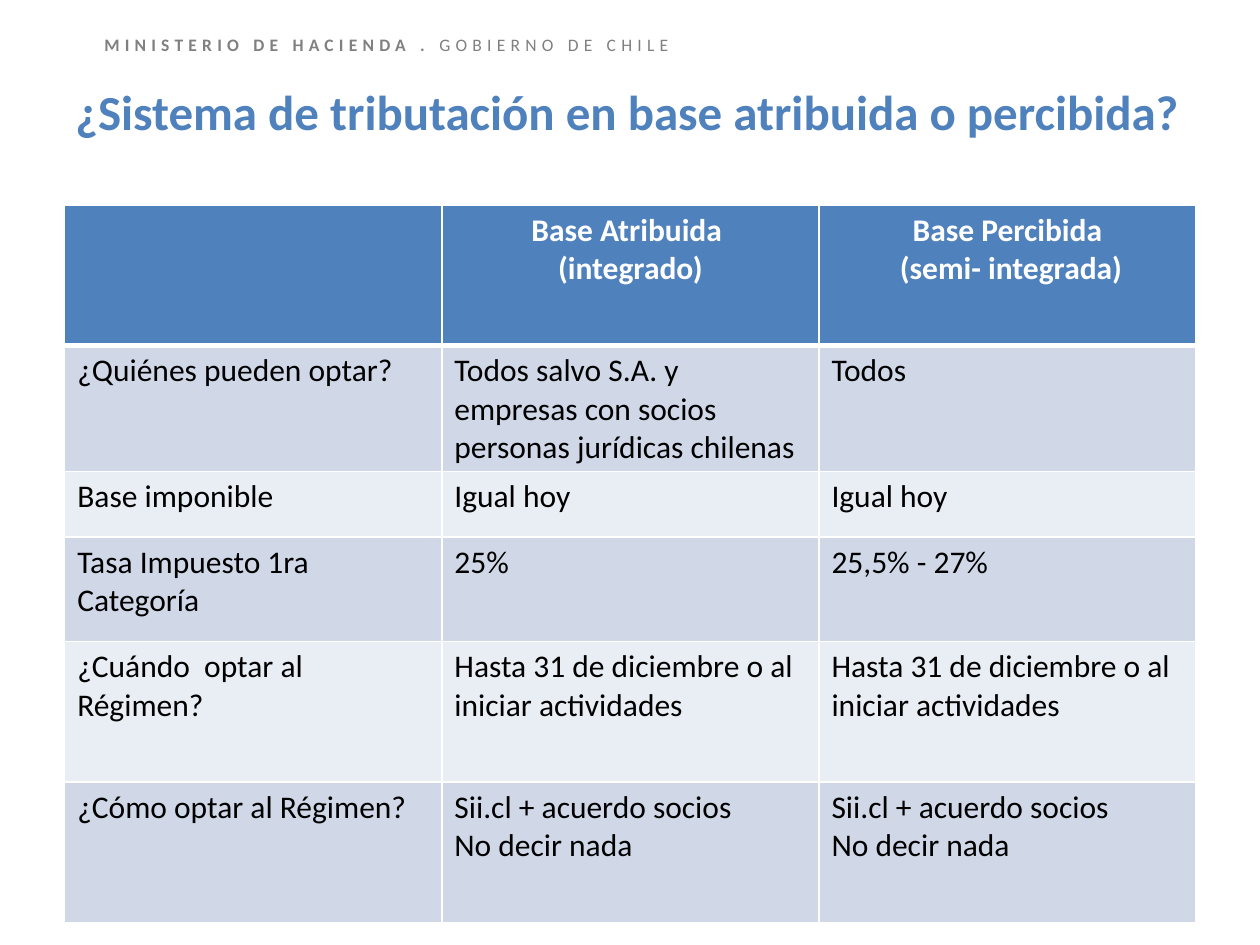
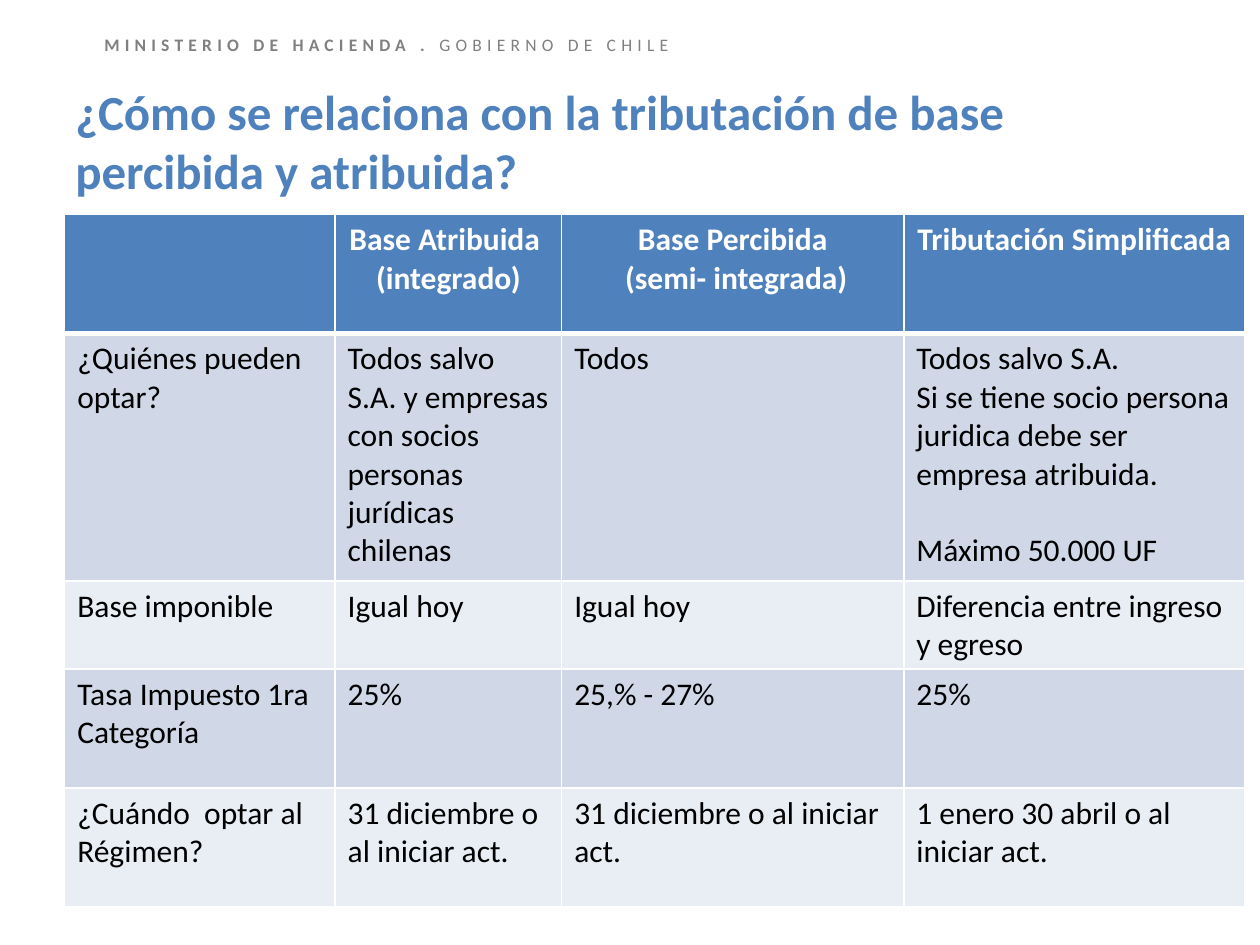
from pptx import Presentation
from pptx.dml.color import RGBColor
from pptx.enum.text import PP_ALIGN
from pptx.oxml.ns import qn
from pptx.util import Pt
from lxml.etree import SubElement

FONT = "Calibri"
BLUE = RGBColor(0x4F, 0x81, 0xBD)
DARK_BAND = RGBColor(0xD0, 0xD8, 0xE8)
LIGHT_BAND = RGBColor(0xE9, 0xED, 0xF4)
GRAY = RGBColor(0x80, 0x80, 0x80)
WHITE = RGBColor(0xFF, 0xFF, 0xFF)
BLACK = RGBColor(0, 0, 0)

# Content: a line break in a cell starts a paragraph, "\n\n" adds a gap before it
MINISTRY, COUNTRY = "MINISTERIO DE HACIENDA . ", "GOBIERNO DE CHILE"
ATTRIBUTED = "Base Atribuida \n(integrado)"
RECEIVED = "Base Percibida\n (semi- integrada)"
WHO = "Todos salvo S.A. y empresas con socios personas jurídicas chilenas"
WHEN = "Hasta 31 de diciembre o al iniciar actividades"
WHEN_SHORT = "31 diciembre o al iniciar act."
HOW = "Sii.cl + acuerdo socios\nNo decir nada"

SLIDES = [
    {
        "title": "¿Sistema de tributación en base atribuida o percibida?",
        "top": 117,
        "widths": [215.5] * 3,
        "heights": [80.5, 50, 37.5, 59.5, 80.5, 80.5],
        "rows": [
            ("", ATTRIBUTED, RECEIVED),
            ("¿Quiénes pueden optar?", WHO, "Todos"),
            ("Base imponible", "Igual hoy", "Igual hoy"),
            ("Tasa Impuesto 1ra Categoría", "25%", "25,5% - 27%"),
            ("¿Cuándo  optar al Régimen?", WHEN, WHEN),
            ("¿Cómo optar al Régimen?", HOW, HOW),
        ],
    },
    {
        "title": "¿Cómo se relaciona con la tributación de base percibida y atribuida?",
        "top": 122.5,
        "widths": [154.5, 129.5, 195.5, 195],
        "heights": [68, 141.5, 45.5, 68, 68],
        "rows": [
            ("", ATTRIBUTED, RECEIVED, "Tributación Simplificada"),
            ("¿Quiénes pueden optar?", WHO, "Todos",
             "Todos salvo S.A.\nSi se tiene socio persona juridica debe ser "
             "empresa atribuida.\n\nMáximo 50.000 UF"),
            ("Base imponible", "Igual hoy", "Igual hoy",
             "Diferencia entre ingreso y egreso"),
            ("Tasa Impuesto 1ra Categoría", "25%", "25,% - 27%", "25%"),
            ("¿Cuándo  optar al Régimen?", WHEN_SHORT, WHEN_SHORT,
             "1 enero 30 abril o al iniciar act."),
        ],
    },
]

TABLE_LEFT = 37
LINE_HEIGHT = 22


def set_font(font, size, color, bold):
    font.name, font.size, font.bold = FONT, Pt(size), bold
    font.color.rgb = color


def add_text_box(slide, left, top, width, height):
    frame = slide.shapes.add_textbox(Pt(left), Pt(top), Pt(width), Pt(height)).text_frame
    frame.word_wrap = True
    return frame.paragraphs[0]


def add_ministry_line(slide):
    paragraph = add_text_box(slide, 52.5, 16, 503, 19.5)
    for text, bold in ((MINISTRY, True), (COUNTRY, False)):
        run = paragraph.add_run()
        run.text = text
        set_font(run.font, 10, GRAY, bold)
        run._r.get_or_add_rPr().set("spc", "300")


def add_title(slide, text):
    paragraph = add_text_box(slide, 36, 43, 648, 57)
    paragraph.text = text
    set_font(paragraph.font, 28, BLUE, True)


def set_borders(cell, top, bottom):
    properties = cell._tc.get_or_add_tcPr()
    for side, width in (("L", 1), ("R", 1), ("T", top), ("B", bottom)):
        line = SubElement(properties, qn(f"a:ln{side}"), w=str(Pt(width)))
        fill = SubElement(line, qn("a:solidFill"))
        SubElement(fill, qn("a:srgbClr"), val=str(WHITE))


def fill_cell(cell, text, row):
    is_header = row == 0
    set_borders(cell, 3 if row == 1 else 1, 3 if is_header else 1)
    cell.fill.solid()
    cell.fill.fore_color.rgb = BLUE if is_header else (LIGHT_BAND, DARK_BAND)[row % 2]
    cell.text = text.replace("\n\n", "\n")
    for paragraph in cell.text_frame.paragraphs:
        paragraph.alignment = PP_ALIGN.CENTER if is_header else PP_ALIGN.LEFT
        set_font(paragraph.font, 18, WHITE if is_header else BLACK, is_header)
    if "\n\n" in text:
        cell.text_frame.paragraphs[-1].space_before = Pt(LINE_HEIGHT)


def add_comparison(slide, top, widths, heights, rows):
    table = slide.shapes.add_table(
        len(rows), len(widths), Pt(TABLE_LEFT), Pt(top),
        Pt(sum(widths)), Pt(sum(heights))).table
    for column, width in zip(table.columns, widths):
        column.width = Pt(width)
    for row, (texts, height) in enumerate(zip(rows, heights)):
        table.rows[row].height = Pt(height)
        for column, text in enumerate(texts):
            fill_cell(table.cell(row, column), text, row)


def main():
    presentation = Presentation()
    presentation.slide_width, presentation.slide_height = Pt(720), Pt(540)
    for content in SLIDES:
        slide = presentation.slides.add_slide(presentation.slide_layouts[6])
        add_ministry_line(slide)
        add_title(slide, content["title"])
        add_comparison(slide, content["top"], content["widths"],
                       content["heights"], content["rows"])
    presentation.save("out.pptx")


if __name__ == "__main__":
    main()
